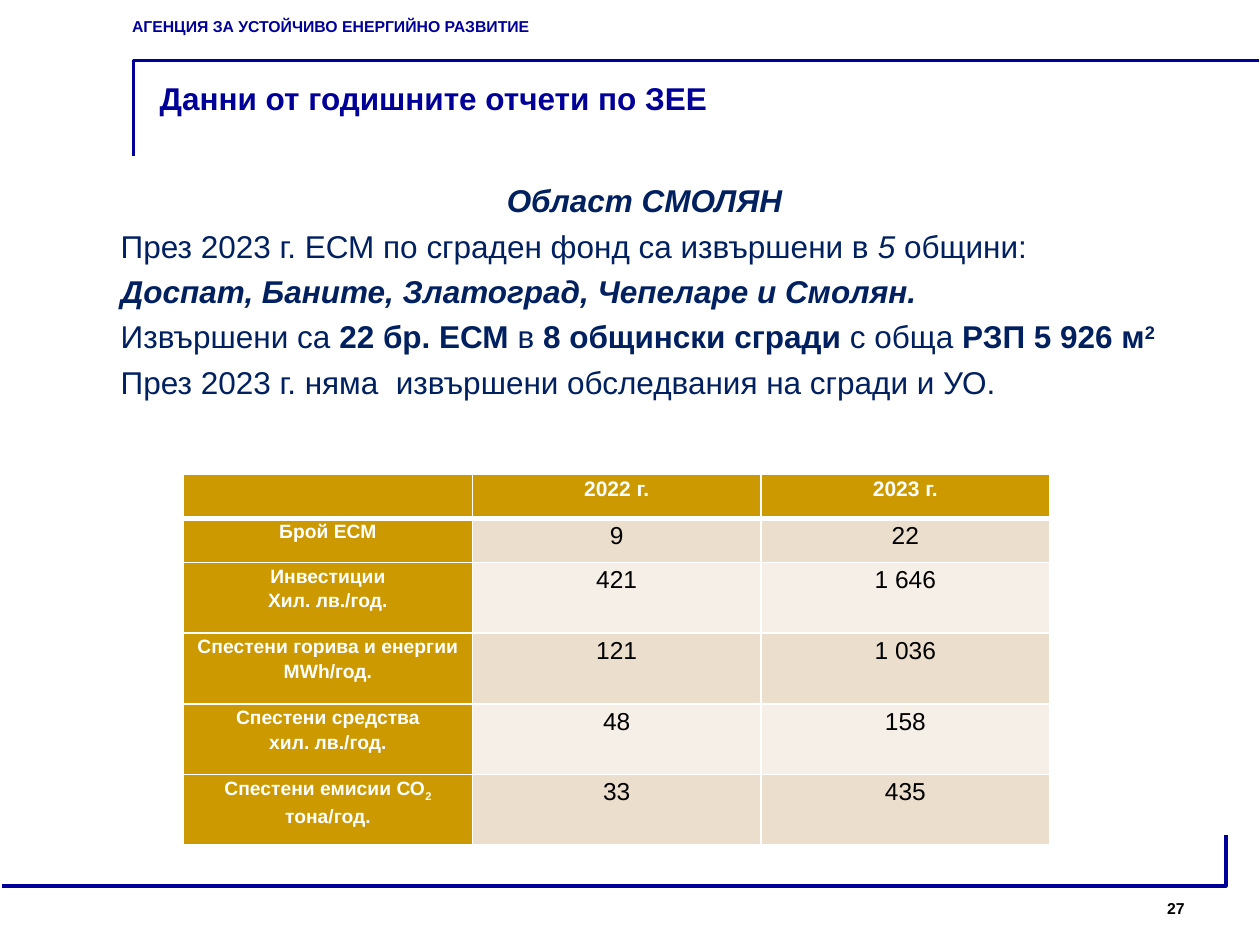
"""Build the slide on yearly energy efficiency reports for Smolyan district."""
import pptx
import pptx.dml.color
import pptx.enum.text
import pptx.oxml
import pptx.oxml.ns
import pptx.util

Pt = pptx.util.Pt
ALIGN = pptx.enum.text.PP_ALIGN
ANCHOR = pptx.enum.text.MSO_ANCHOR
COLORS = {
    "blue": "000099", "navy": "002060", "black": "000000", "white": "FFFFFF",
    "gold": "CC9900", "band": "ECDECC", "light": "F6EFE7",
}


def rgb(name):
    return pptx.dml.color.RGBColor.from_string(COLORS[name])


def add_text(p, text, size=18, color="navy", bold=False, italic=False, baseline=0):
    r = p.add_run()
    r.text = text
    r.font.name = "Arial"
    r.font.size = Pt(size)
    r.font.bold = bold
    r.font.italic = italic
    r.font.color.rgb = rgb(color)
    if baseline:
        r._r.get_or_add_rPr().set("baseline", str(baseline * 1000))


prs = pptx.Presentation()
prs.slide_width, prs.slide_height = Pt(720), Pt(540)
s = prs.slides.add_slide(prs.slide_layouts[6])

brackets = [
    [(76.3, 89.3), (76.3, 34.6), (719.3, 34.6)],
    [(700.6, 477.4), (700.6, 506.2), (1.4, 506.2)],
]
for points in brackets:
    start, *rest = [(Pt(x), Pt(y)) for x, y in points]
    fb = s.shapes.build_freeform(*start)
    fb.add_line_segments(rest, close=False)
    sp = fb.convert_to_shape()
    sp.shadow.inherit = False
    sp.fill.background()
    sp.line.color.rgb = rgb("blue")
    sp.line.width = Pt(2)

b, i, bi = {"bold": True}, {"italic": True}, {"bold": True, "italic": True}
agency = [[("АГЕНЦИЯ ЗА УСТОЙЧИВО ЕНЕРГИЙНО РАЗВИТИЕ", {"size": 9, "color": "blue", **b})]]
title = [[("Данни от годишните отчети по ЗЕЕ", {"color": "blue", **b})]]
body = [
    [("Област СМОЛЯН", bi)],
    [("През 2023 г. ЕСМ по сграден фонд са извършени в ", {}), ("5", i), (" общини:", {})],
    [("Доспат, Баните, Златоград, Чепеларе и Смолян.", bi)],
    [("Извършени са ", {}), ("22 бр. ЕСМ ", b), ("в ", {}), ("8 общински сгради ", b),
     ("с обща ", {}), ("РЗП 5 926 м", b), ("2", {"baseline": 30, **b})],
    [("През 2023 г. няма  извършени обследвания на сгради и УО.", {})],
]
number = [[("27", {"size": 9, "color": "black", **b})]]

boxes = [
    ((68.4, 5.8, 595.4, 18), agency, ALIGN.LEFT, ANCHOR.TOP),
    ((84.2, 41.8, 590.4, 49), title, ALIGN.LEFT, ANCHOR.TOP),
    ((61.9, 100.1, 612.7, 382.3), body, ALIGN.CENTER, ANCHOR.TOP),
    ((516.2, 491.8, 167.8, 36), number, ALIGN.RIGHT, ANCHOR.BOTTOM),
]
for box, paragraphs, first_align, anchor in boxes:
    tf = s.shapes.add_textbox(*map(Pt, box)).text_frame
    tf.word_wrap = True
    tf.vertical_anchor = anchor
    for n, runs in enumerate(paragraphs):
        p = tf.add_paragraph() if n else tf.paragraphs[0]
        p.alignment = ALIGN.LEFT if n else first_align
        if n:
            p.space_before = Pt(4.3)
        for text, fmt in runs:
            add_text(p, text, **fmt)

rows = [
    ([""], "2022 г.", "2023 г."),
    (["Брой ЕСМ"], "9", "22"),
    (["Инвестиции", "Хил. лв./год."], "421", "1 646"),
    (["Спестени горива и енергии MWh/год."], "121", "1 036"),
    (["Спестени средства", "хил. лв./год."], "48", "158"),
    (["Спестени емисии СО|2 |тона/год."], "33", "435"),
]
heights = [25.2, 25.2] + [40.4] * 4
tbl = s.shapes.add_table(len(rows), 3, Pt(104.9), Pt(271), Pt(495), Pt(sum(heights))).table
for col in tbl.columns:
    col.width = Pt(165)
for y, (label, *values) in enumerate(rows):
    tbl.rows[y].height = Pt(heights[y])
    for x, lines in enumerate([label] + [[v] for v in values]):
        cell = tbl.cell(y, x)
        cell.margin_left = cell.margin_right = Pt(5)
        cell.margin_top = cell.margin_bottom = 0
        head = y == 0 or x == 0
        size = 12 if y == 0 else 11 if x == 0 else 14
        for n, line in enumerate(lines):
            p = cell.text_frame.add_paragraph() if n else cell.text_frame.paragraphs[0]
            p.alignment = ALIGN.CENTER
            p.line_spacing = 1.15
            p.space_after = Pt(6 if n == len(lines) - 1 else 0)
            p.font.size = Pt(size)
            for part, text in enumerate(line.split("|") if line else []):
                add_text(p, text, size=size, color="white" if head else "black",
                         bold=head, baseline=-25 if part == 1 else 0)
        for side in "LRTB":
            thick = (y, side) in [(0, "B"), (1, "T")]
            cell._tc.get_or_add_tcPr().append(pptx.oxml.parse_xml(
                f'<a:ln{side} {pptx.oxml.ns.nsdecls("a")} w="{Pt(3 if thick else 1)}">'
                f'<a:solidFill><a:srgbClr val="{COLORS["white"]}"/></a:solidFill></a:ln{side}>'))
        cell.fill.solid()
        cell.fill.fore_color.rgb = rgb("gold" if head else "band" if y % 2 else "light")

prs.save("out.pptx")
